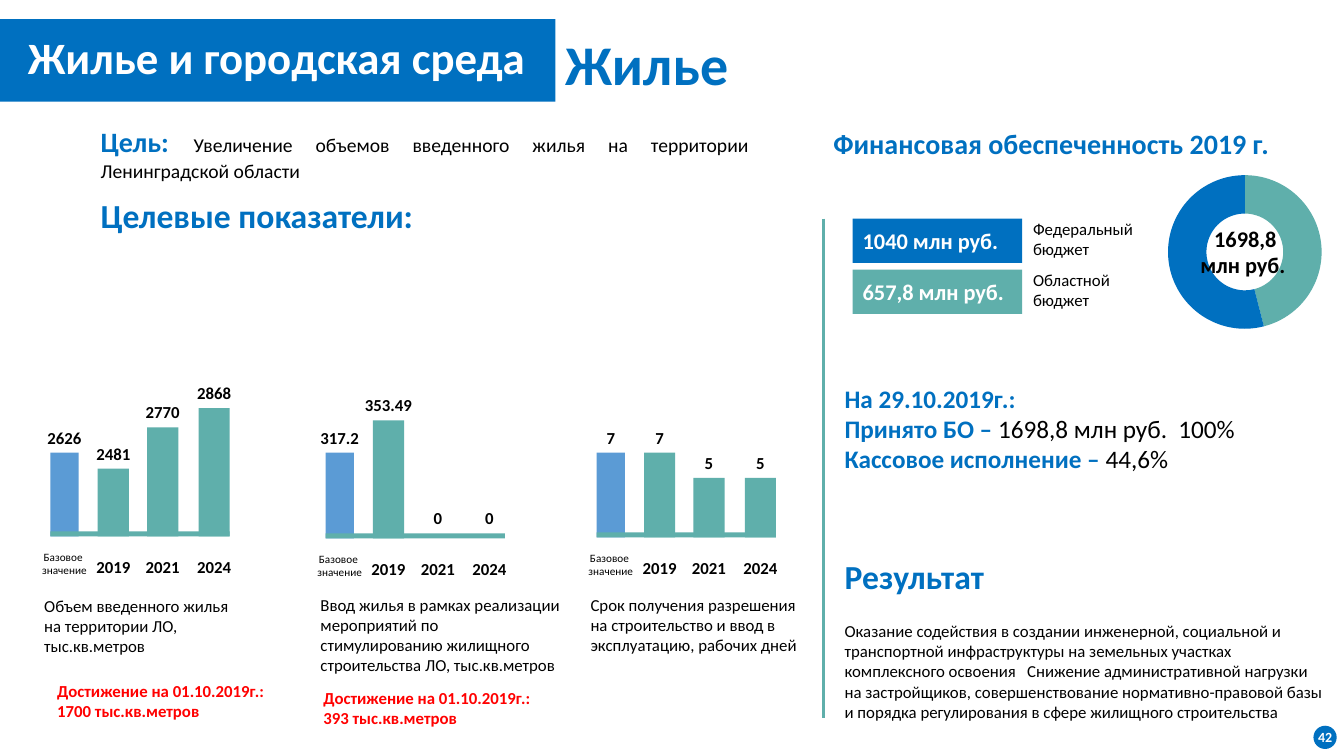
"""Build the housing slide: goal, target indicators, funding and result."""
from dataclasses import dataclass, field

from lxml import etree
from pptx import Presentation
from pptx.chart.data import CategoryChartData
from pptx.dml.color import RGBColor
from pptx.enum.chart import XL_CHART_TYPE
from pptx.enum.shapes import MSO_CONNECTOR, MSO_SHAPE
from pptx.enum.text import MSO_ANCHOR, PP_ALIGN
from pptx.oxml.ns import qn
from pptx.util import Pt

LEFT, CENTER, JUSTIFY = PP_ALIGN.LEFT, PP_ALIGN.CENTER, PP_ALIGN.JUSTIFY
TOP, MIDDLE = MSO_ANCHOR.TOP, MSO_ANCHOR.MIDDLE
RECTANGLE, OVAL = MSO_SHAPE.RECTANGLE, MSO_SHAPE.OVAL
DOUGHNUT, STRAIGHT = XL_CHART_TYPE.DOUGHNUT, MSO_CONNECTOR.STRAIGHT


@dataclass(frozen=True)
class Theme:
    font: str = "Calibri"
    blue: str = "0070C0"
    teal: str = "5FAFAB"
    base: str = "5B9BD5"
    styles: dict = field(default_factory=lambda: {
        "banner": (32, "FFFFFF", True),
        "title": (40, "0070C0", True),
        "heading": (24, "0070C0", True),
        "subheading": (20, "0070C0", True),
        "status": (18, "0070C0", True),
        "status value": (18, "000000", False),
        "goal": (14, "000000", False),
        "body": (12, "000000", False),
        "label": (12, "000000", True),
        "small": (8, "000000", False),
        "achieved": (12, "FF0000", True),
        "amount": (16, "FFFFFF", True),
        "total": (16, "000000", True),
        "page": (10, "FFFFFF", True),
    })


THEME = Theme()

TEXTS = [
    ((396.7, 17.3, 400, 55.4), LEFT, [[("Жилье", "title")]]),
    ((64.8, 85.7, 477.4, 48.2), JUSTIFY, [[
        ("Цель: ", "subheading"),
        ("Увеличение объемов введенного жилья на территории Ленинградской области", "goal")]]),
    ((64.8, 135.4, 245.5, 36), LEFT, [[("Целевые показатели:", "heading")]]),
    ((588.2, 87.1, 333.4, 31.7), LEFT, [[("Финансовая обеспеченность 2019 г.", "subheading")]]),
    ((596.2, 270, 342.7, 94.3), LEFT, [
        [("На 29.10.2019г.:", "status")],
        [("Принято БО – ", "status"), ("1698,8 млн руб.  100%", "status value")],
        [("Кассовое исполнение – ", "status"), ("44,6%", "status value")]]),
    ((596.2, 393.8, 245.5, 36), LEFT, [[("Результат", "heading")]]),
    ((596.2, 439.9, 358.6, 79.9), LEFT, [[(
        "Оказание содействия в создании инженерной, социальной и транспортной "
        "инфраструктуры на земельных участках комплексного освоения   Снижение "
        "административной нагрузки на застройщиков, совершенствование "
        "нормативно-правовой базы и порядка регулирования в сфере жилищного "
        "строительства", "body")]]),
    ((24.5, 421.9, 148.3, 51.1), LEFT, [[
        ("Объем введенного жилья на территории ЛО, тыс.кв.метров", "body")]]),
    ((221.8, 421.2, 185.8, 65.5), LEFT, [[
        ("Ввод жилья в рамках реализации мероприятий по стимулированию жилищного "
         "строительства ЛО, тыс.кв.метров", "body")]]),
    ((414.7, 421.2, 164.9, 51.1), LEFT, [[
        ("Срок получения разрешения на строительство и ввод в эксплуатацию, "
         "рабочих дней", "body")]]),
    ((33.8, 482.4, 164.2, 36), LEFT, [[
        ("Достижение на 01.10.2019г.: 1700 тыс.кв.метров", "achieved")]]),
    ((223.9, 487.4, 188.6, 51.1), LEFT, [[
        ("Достижение на 01.10.2019г.: \n393 тыс.кв.метров", "achieved")]]),
]

PERIODS = ["Базовое \nзначение", "2019", "2021", "2024"]
INDICATORS = [
    {"left": 36, "axis": 379.6,
     "bars": [("2626", 323.3), ("2481", 334.8), ("2770", 305.3), ("2868", 291.6)]},
    {"left": 232.6, "axis": 381,
     "bars": [("317.2", 323.3), ("353.49", 300.2), ("0", None), ("0", None)]},
    {"left": 426.2, "axis": 380.3,
     "bars": [("7", 323.3), ("7", 323.3), ("5", 341.3), ("5", 341.3)]},
]
BAR_SLOTS = [(0, 20.2), (33.8, 22.3), (69.1, 22.3), (105.8, 22.3)]
AXIS_WIDTH, AXIS_HEIGHT = 128, 3.6
LABEL_WIDTH, VALUE_HEIGHT = 58, 21.6

BUDGETS = [("1040 млн руб.", "Федеральный бюджет", THEME.blue),
           ("657,8 млн руб.", "Областной бюджет", THEME.teal)]
BUDGET_TOP, BUDGET_STEP = 156.2, 36.4
FUNDING_SHARES = [("1", 46, THEME.teal), ("2", 54, THEME.blue),
                  ("3", None, THEME.blue), ("4", None, THEME.blue)]
FUNDING_TOTAL = "1698,8\nмлн руб. "


def points(values):
    return [Pt(value) for value in values]


def write(frame, paragraphs, align, anchor=TOP):
    frame.word_wrap = True
    frame.vertical_anchor = anchor
    for number, pieces in enumerate(paragraphs):
        paragraph = frame.add_paragraph() if number else frame.paragraphs[0]
        paragraph.alignment = align
        for text, style in pieces:
            done = len(paragraph.runs)
            if done:
                paragraph.add_run().text = text
            else:
                paragraph.text = text
            size, color, bold = THEME.styles[style]
            for run in paragraph.runs[done:]:
                run.font.name = THEME.font
                run.font.size = Pt(size)
                run.font.bold = bold
                run.font.color.rgb = RGBColor.from_string(color)


def add_text(slide, box, paragraphs, align=LEFT):
    write(slide.shapes.add_textbox(*points(box)).text_frame, paragraphs, align)


def add_block(slide, box, color, kind=RECTANGLE):
    block = slide.shapes.add_shape(kind, *points(box))
    block.shadow.inherit = False
    block.fill.solid()
    block.fill.fore_color.rgb = RGBColor.from_string(color)
    block.line.fill.background()
    return block


def add_indicator(slide, left, axis, bars):
    for (offset, width), (value, top), period in zip(BAR_SLOTS, bars, PERIODS):
        is_base = period == PERIODS[0]
        if top is not None:
            add_block(slide, (left + offset, top, width, axis + AXIS_HEIGHT - top),
                      THEME.base if is_base else THEME.teal)
        label_left = left + offset + (width - LABEL_WIDTH) / 2
        value_top = (axis if top is None else top) - VALUE_HEIGHT
        add_text(slide, (label_left, value_top, LABEL_WIDTH, VALUE_HEIGHT),
                 [[(value, "label")]], CENTER)
        add_text(slide, (label_left, axis + (10 if is_base else 14.4), LABEL_WIDTH, 41),
                 [[(period, "small" if is_base else "label")]], CENTER)
    add_block(slide, (left, axis, AXIS_WIDTH, AXIS_HEIGHT), THEME.teal)


def add_funding(slide):
    data = CategoryChartData()
    data.categories = [name for name, _, _ in FUNDING_SHARES]
    data.add_series("Series 1", [share for _, share, _ in FUNDING_SHARES])
    chart = slide.shapes.add_chart(DOUGHNUT, *points((818.7, 115.2, 141, 129.6)), data).chart
    chart.has_legend = False
    chart.has_title = False
    chart.font.name = THEME.font
    chart.font.size = Pt(10)
    chart.font.color.rgb = RGBColor.from_string("000000")
    plot = chart.plots[0]
    plot.vary_by_categories = False
    for number, (_, _, color) in enumerate(FUNDING_SHARES):
        fill = plot.series[0].points[number].format.fill
        fill.solid()
        fill.fore_color.rgb = RGBColor.from_string(color)
    for hole in chart.element.iter(qn("c:holeSize")):
        hole.set("val", "75")
    add_text(slide, (828, 157, 123.1, 46.1), [[(FUNDING_TOTAL, "total")]], CENTER)

    for number, (amount, source, color) in enumerate(BUDGETS):
        top = BUDGET_TOP + number * BUDGET_STEP
        block = add_block(slide, (609.1, top, 121, 31.7), color)
        write(block.text_frame, [[(amount, "amount")]], LEFT, MIDDLE)
        add_text(slide, (730.8, top - 3.4, 108.7, 36), [[(source, "body")]])


def add_divider(slide):
    divider = slide.shapes.add_connector(STRAIGHT, *points((588.2, 156.2, 588.2, 512.6)))
    divider.line.color.rgb = RGBColor.from_string(THEME.teal)
    divider.line.width = Pt(1.5)
    etree.SubElement(divider.element.spPr, qn("a:effectLst"))


def main():
    deck = Presentation()
    deck.slide_width, deck.slide_height = Pt(960), Pt(540)
    slide = deck.slides.add_slide(deck.slide_layouts[6])

    banner = add_block(slide, (0, 13.7, 396.7, 59), THEME.blue).text_frame
    banner.margin_left, banner.margin_bottom = Pt(20), Pt(9.4)
    write(banner, [[("Жилье и городская среда", "banner")]], LEFT, MIDDLE)

    for box, align, paragraphs in TEXTS:
        add_text(slide, box, paragraphs, align)
    add_divider(slide)
    add_funding(slide)
    for indicator in INDICATORS:
        add_indicator(slide, **indicator)

    page = add_block(slide, (938.2, 518.4, 16.6, 16.6), THEME.blue, OVAL).text_frame
    page.margin_left = page.margin_right = page.margin_top = page.margin_bottom = 0
    write(page, [[("42", "page")]], CENTER, MIDDLE)
    page.word_wrap = False

    deck.save("out.pptx")


if __name__ == "__main__":
    main()
